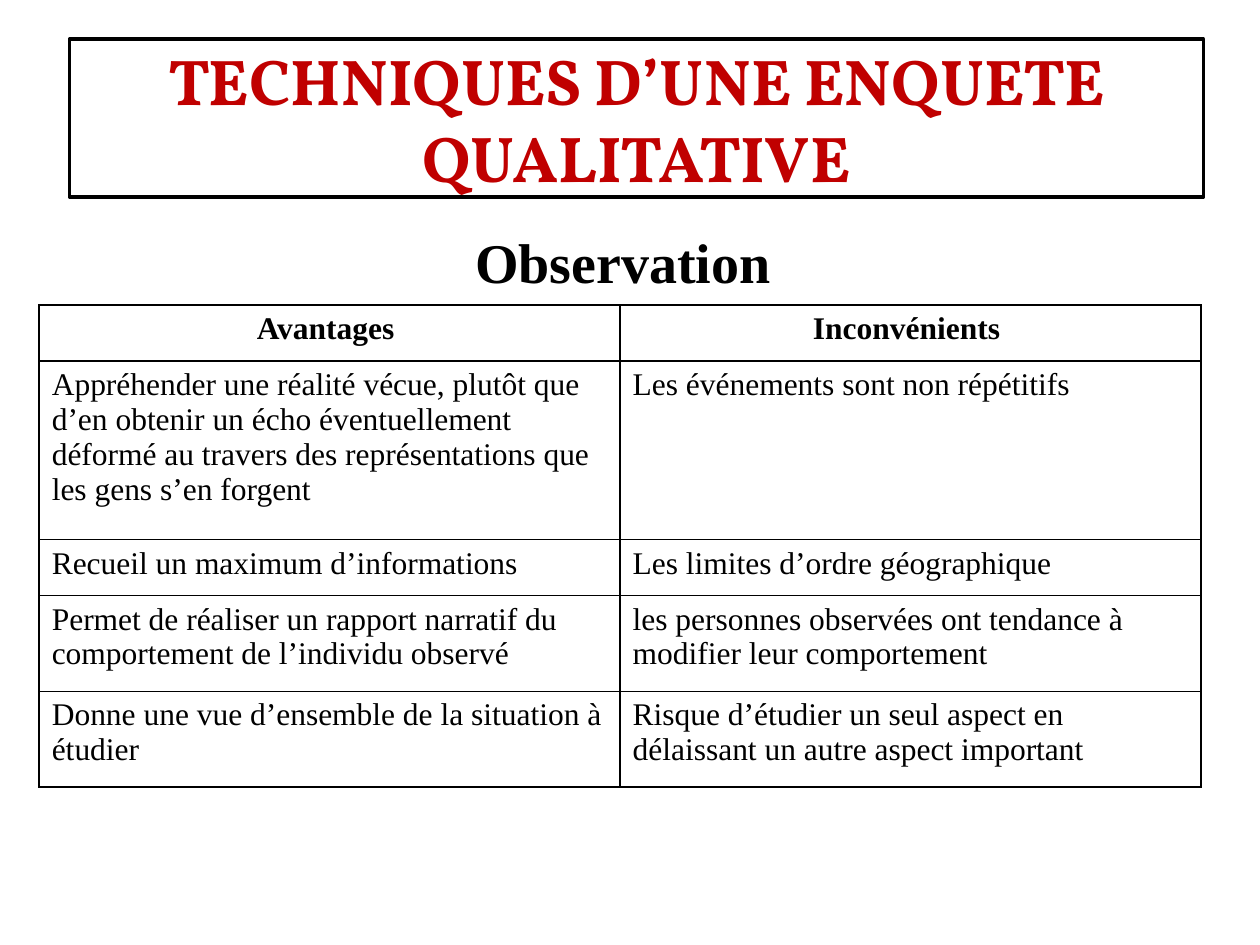
"""Build a slide on the pros and cons of observation as a survey method."""
from typing import NamedTuple

from lxml.etree import SubElement as Sub
from pptx import Presentation
from pptx.dml.color import RGBColor
from pptx.enum.text import MSO_ANCHOR as Anchor
from pptx.enum.text import MSO_AUTO_SIZE as Fit
from pptx.enum.text import PP_ALIGN as Align
from pptx.oxml.ns import qn
from pptx.util import Cm, Pt

BLACK = RGBColor(0, 0, 0)
WHITE = RGBColor(255, 255, 255)
RED = RGBColor(0xC0, 0, 0)
SERIF = "Times New Roman"


class Row(NamedTuple):
    high: float
    pro: str
    con: str


class Style(NamedTuple):
    face: str
    size: int
    tint: RGBColor
    bold: bool
    align: Align


TITLE = Style("Vollkorn", 37, RED, True, Align.CENTER)
TOPIC = Style(SERIF, 32, BLACK, True, Align.CENTER)
HEAD = Style(SERIF, 18, BLACK, True, Align.CENTER)
CELL = Style(SERIF, 18, BLACK, False, Align.LEFT)

ROWS = [
    Row(1.13, "Avantages ", "Inconvénients "),
    Row(3.6, "Appréhender une réalité vécue, plutôt que d’en obtenir un écho "
        "éventuellement déformé au travers des représentations que les gens "
        "s’en forgent", "Les événements sont non répétitifs"),
    Row(1.13, "Recueil un maximum d’informations",
        "Les limites d’ordre géographique"),
    Row(1.93, "Permet de réaliser un rapport narratif du comportement de "
        "l’individu observé",
        "les personnes observées ont tendance à modifier leur comportement"),
    Row(1.93, "Donne une vue d’ensemble de la situation à étudier",
        "Risque d’étudier un seul aspect en délaissant un autre aspect "
        "important"),
]


def write(frame, text: str, style: Style) -> None:
    frame.text = text
    para = frame.paragraphs[0]
    para.alignment = style.align
    font = para.runs[0].font
    font.name, font.size, font.bold = style.face, Pt(style.size), style.bold
    font.color.rgb = style.tint


def place(shape, left: float, top: float, wide: float, high: float) -> None:
    shape.left, shape.top = Cm(left), Cm(top)
    shape.width, shape.height = Cm(wide), Cm(high)


def edge(cell) -> None:
    props = cell._tc.get_or_add_tcPr()
    for spot, side in enumerate(("lnL", "lnR", "lnT", "lnB")):
        line = Sub(props, qn(f"a:{side}"), w=str(Pt(1)))
        fill = Sub(line, qn("a:solidFill"))
        Sub(fill, qn("a:srgbClr"), val=str(BLACK))
        props.insert(spot, line)


def draw_title(slide) -> None:
    title = slide.shapes.title
    place(title, 1.4, 0.79, 22.86, 3.18)
    title.fill.solid()
    title.fill.fore_color.rgb = WHITE
    title.line.color.rgb = BLACK
    title.line.width = Pt(2)
    frame = title.text_frame
    write(frame, "TECHNIQUES D’UNE ENQUETE QUALITATIVE", TITLE)
    frame.auto_size = Fit.NONE
    frame.vertical_anchor = Anchor.MIDDLE


def draw_topic(slide) -> None:
    body = slide.placeholders[1]
    place(body, 1.27, 4.45, 22.86, 12.57)
    frame = body.text_frame
    write(frame, "Observation ", TOPIC)
    frame.auto_size = Fit.NONE
    Sub(frame.paragraphs[0]._p.get_or_add_pPr(), qn("a:buNone"))


def draw_table(slide, rows: list[Row]) -> None:
    high = sum(row.high for row in rows)
    table = slide.shapes.add_table(
        len(rows), 2, Cm(0.79), Cm(6.15), Cm(23.42), Cm(high)).table
    for num, row in enumerate(rows):
        table.rows[num].height = Cm(row.high)
        for col, text in enumerate((row.pro, row.con)):
            cell = table.cell(num, col)
            write(cell.text_frame, text, CELL if num else HEAD)
            cell.fill.solid()
            cell.fill.fore_color.rgb = WHITE
            edge(cell)


def main() -> None:
    deck = Presentation()
    deck.slide_width, deck.slide_height = Cm(25.4), Cm(19.05)
    slide = deck.slides.add_slide(deck.slide_layouts[1])
    draw_title(slide)
    draw_topic(slide)
    draw_table(slide, ROWS)
    deck.save("out.pptx")


if __name__ == "__main__":
    main()
